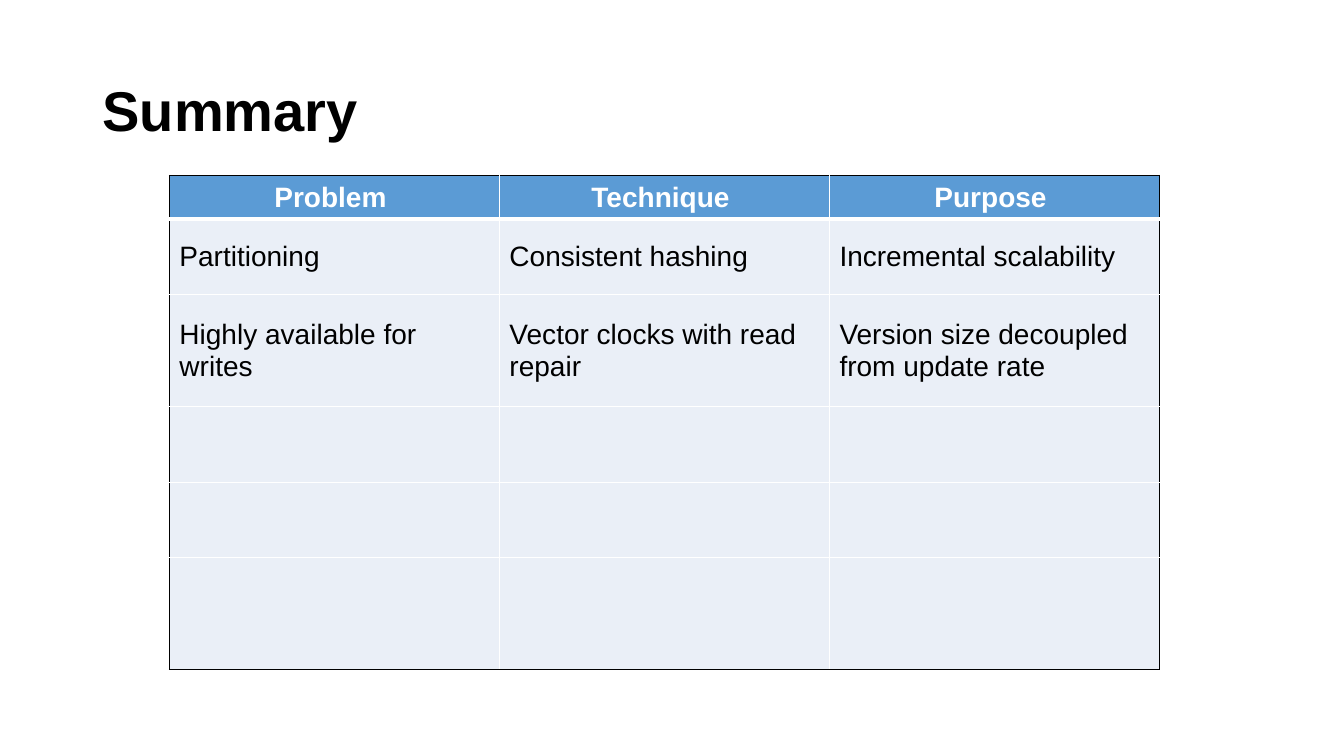
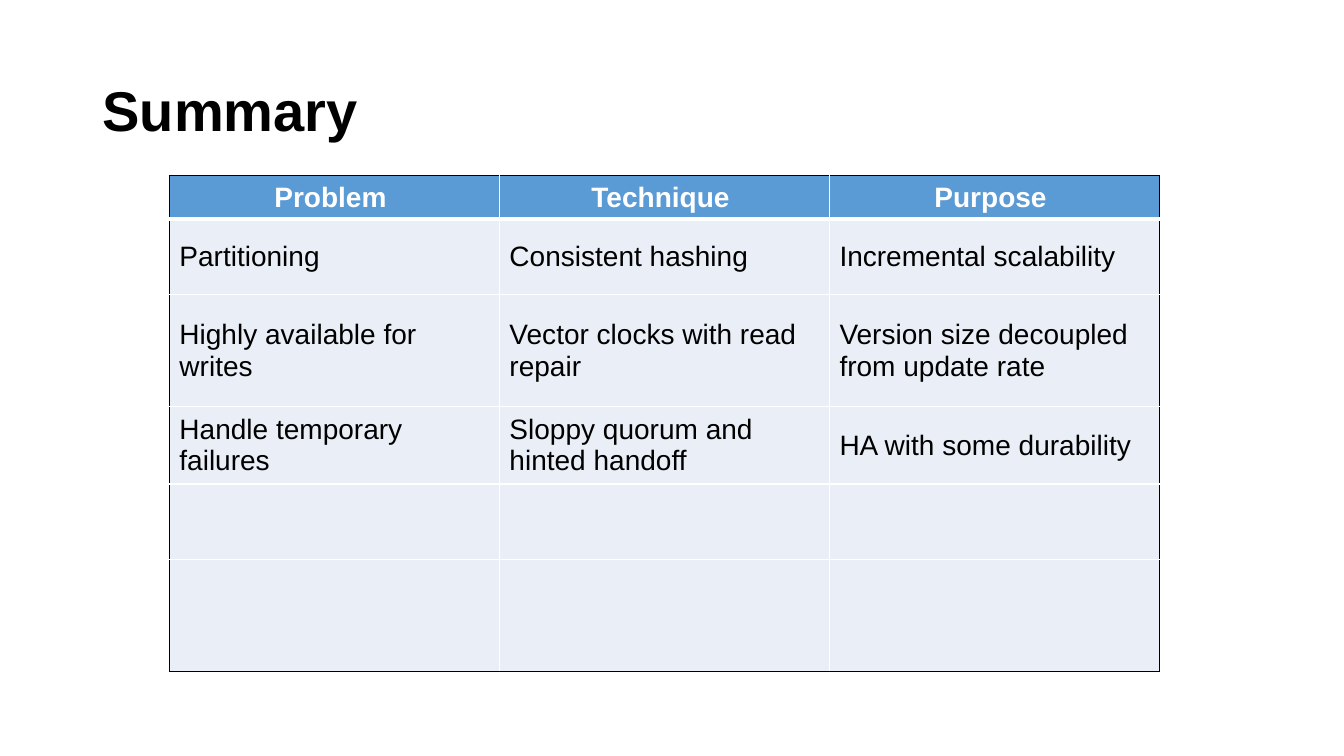
"""Build two Summary slides whose table fills in row by row."""
from lxml.etree import SubElement
from pptx import Presentation
from pptx.dml.color import RGBColor
from pptx.enum.text import MSO_ANCHOR, PP_ALIGN
from pptx.oxml.ns import qn
from pptx.util import Inches, Pt

BLACK = RGBColor(0x00, 0x00, 0x00)
WHITE = RGBColor(0xFF, 0xFF, 0xFF)
HEADER_BLUE = RGBColor(0x5B, 0x9B, 0xD5)
BODY_BLUE = RGBColor(0xEA, 0xEF, 0xF7)
FONT = "Arial"

HEADINGS = ("Problem ", "Technique ", "Purpose ")
TECHNIQUES = (
    ("Partitioning ", "Consistent hashing ", "Incremental scalability "),
    ("Highly available for writes ", "Vector clocks with read repair ",
     "Version size decoupled from update rate "),
    ("Handle temporary failures ", "Sloppy quorum and hinted handoff ",
     "HA with some durability "),
)
ROW_HEIGHTS = (0.39, 0.75, 1.11, 0.75, 0.75, 1.11)
LAST_ROW = len(ROW_HEIGHTS) - 1
LAST_COLUMN = len(HEADINGS) - 1


def style_paragraph(paragraph, size, color, bold):
    paragraph.font.name = FONT
    paragraph.font.size = Pt(size)
    paragraph.font.bold = bold
    paragraph.font.color.rgb = color


def add_border(cell, side, color, width):
    line = SubElement(cell._tc.get_or_add_tcPr(), qn(f"a:ln{side}"), w=str(Pt(width)))
    fill = SubElement(line, qn("a:solidFill"))
    SubElement(fill, qn("a:srgbClr"), val=str(color))


prs = Presentation()
prs.slide_width = Inches(13.33)
prs.slide_height = Inches(7.5)

for shown_count in (2, 3):
    slide = prs.slides.add_slide(prs.slide_layouts[6])

    title = slide.shapes.add_textbox(
        Inches(0.92), Inches(0.4), Inches(11.5), Inches(1.45)).text_frame
    title.word_wrap = True
    title.vertical_anchor = MSO_ANCHOR.MIDDLE
    heading = title.paragraphs[0]
    heading.text = "Summary"
    heading.line_spacing = 0.9
    style_paragraph(heading, 40, BLACK, True)

    summary = slide.shapes.add_table(
        len(ROW_HEIGHTS), len(HEADINGS),
        Inches(1.68), Inches(1.74), Inches(9.82), Inches(sum(ROW_HEIGHTS))).table
    for row, height in zip(summary.rows, ROW_HEIGHTS):
        row.height = Inches(height)

    shown_rows = (HEADINGS, *TECHNIQUES[:shown_count])
    for r in range(len(ROW_HEIGHTS)):
        is_header = r == 0
        for c in range(len(HEADINGS)):
            cell = summary.cell(r, c)
            add_border(cell, "L", BLACK if c == 0 else WHITE, 1)
            add_border(cell, "R", BLACK if c == LAST_COLUMN else WHITE, 1)
            add_border(cell, "T", BLACK if is_header else WHITE, 3 if r == 1 else 1)
            add_border(cell, "B", BLACK if r == LAST_ROW else WHITE, 3 if is_header else 1)
            cell.fill.solid()
            cell.fill.fore_color.rgb = HEADER_BLUE if is_header else BODY_BLUE
            cell.vertical_anchor = MSO_ANCHOR.MIDDLE
            if r < len(shown_rows):
                entry = cell.text_frame.paragraphs[0]
                entry.text = shown_rows[r][c]
                entry.alignment = PP_ALIGN.CENTER if is_header else PP_ALIGN.LEFT
                style_paragraph(entry, 20, WHITE if is_header else BLACK, is_header)

prs.save("out.pptx")
